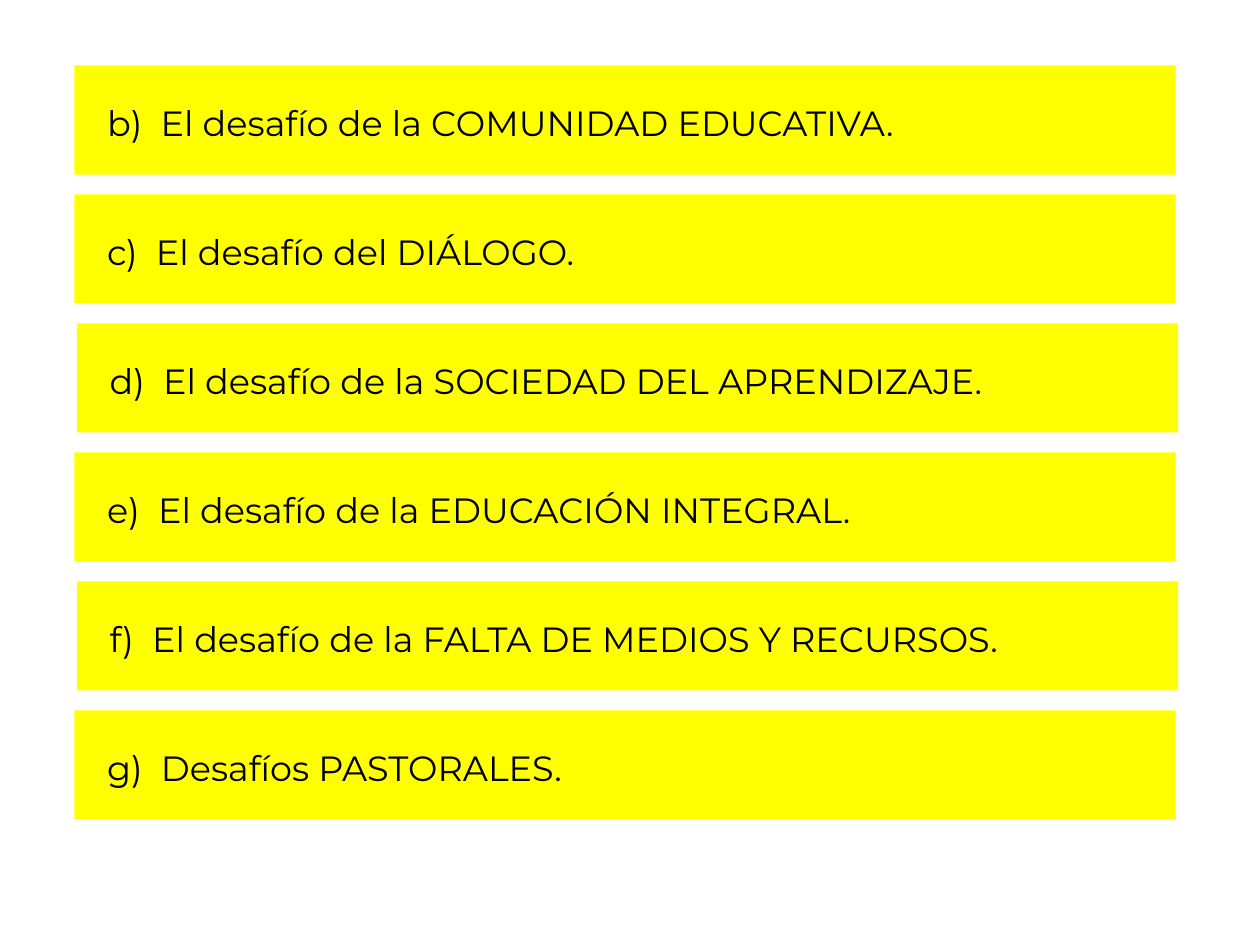
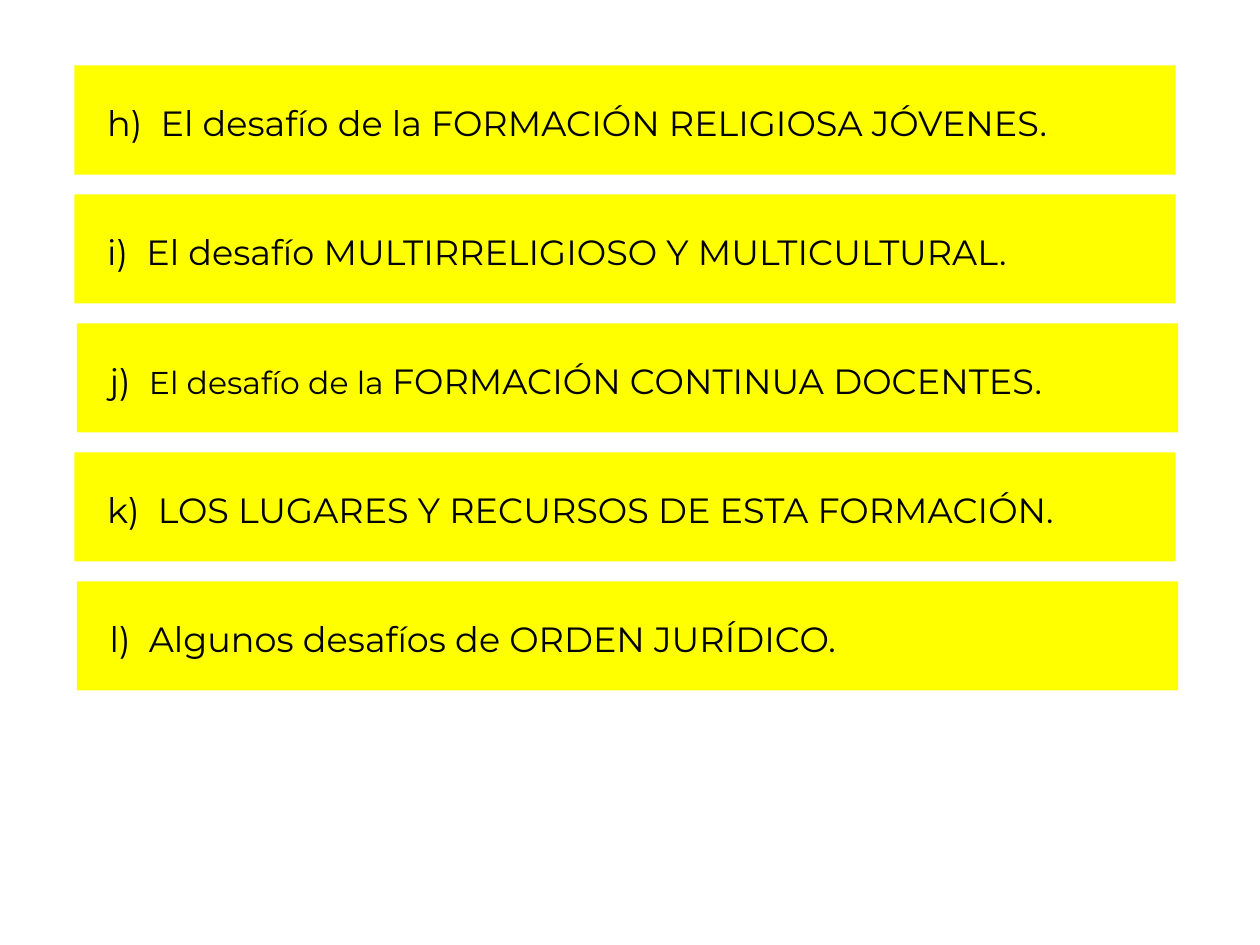
"""Build two slides listing the educational challenges as lettered bands."""
import dataclasses
import typing

import pptx
import pptx.dml.color
import pptx.enum.shapes
import pptx.enum.text
import pptx.util

Cm = pptx.util.Cm
RGBColor = pptx.dml.color.RGBColor


@dataclasses.dataclass(frozen=True)
class Theme:
    font: str = "Montserrat"
    ink: RGBColor = RGBColor(0x00, 0x00, 0x00)
    band_fill: RGBColor = RGBColor(0xFF, 0xFF, 0x00)
    body_size: float = 20
    lead_size: float = 18
    letter_gap: float = 5.2


@dataclasses.dataclass(frozen=True)
class Challenge:
    letter: str
    lead: str
    topic: str
    lead_size: float = Theme.body_size


THEME = Theme()

BAND_LEFT, BAND_TOP = Cm(1.5), Cm(1.32)
BAND_WIDTH, BAND_HEIGHT = Cm(22.2), Cm(2.2)
BAND_PITCH = Cm(2.6)
SHIFTED_ROWS, ROW_SHIFT = (2, 4), Cm(0.05)
TEXT_INSET_X, TEXT_INSET_Y = Cm(0.41), Cm(0.6)
TEXT_WIDTH, TEXT_HEIGHT = Cm(21.59), Cm(1.12)

SLIDES = (
    (
        Challenge("b", "El desafío de la ", "COMUNIDAD EDUCATIVA."),
        Challenge("c", "El desafío del ", "DIÁLOGO."),
        Challenge("d", "El desafío de la ", "SOCIEDAD DEL APRENDIZAJE."),
        Challenge("e", "El desafío de la ", "EDUCACIÓN INTEGRAL."),
        Challenge("f", "El desafío de la ", "FALTA DE MEDIOS Y RECURSOS."),
        Challenge("g", "Desafíos ", "PASTORALES."),
    ),
    (
        Challenge("h", "El desafío de la ", "FORMACIÓN RELIGIOSA JÓVENES."),
        Challenge("i", "El desafío ", "MULTIRRELIGIOSO Y MULTICULTURAL."),
        Challenge("j", "El desafío de la ", "FORMACIÓN CONTINUA DOCENTES.",
                  THEME.lead_size),
        Challenge("k", "", "LOS LUGARES Y RECURSOS DE ESTA FORMACIÓN."),
        Challenge("l", "Algunos desafíos de ", "ORDEN JURÍDICO."),
    ),
)


def add_span(para: typing.Any, text: str, *, size: float = THEME.body_size,
             color: RGBColor = THEME.ink, spacing: float = 0) -> None:
    span = para.add_run()
    span.text = text
    span.font.name = THEME.font
    span.font.size = pptx.util.Pt(size)
    span.font.color.rgb = color
    if spacing:
        span._r.get_or_add_rPr().set("spc", str(round(spacing * 100)))


def add_band(page: typing.Any, challenge: Challenge, row: int) -> None:
    left = BAND_LEFT + (ROW_SHIFT if row in SHIFTED_ROWS else 0)
    top = BAND_TOP + row * BAND_PITCH
    band = page.shapes.add_shape(pptx.enum.shapes.MSO_SHAPE.RECTANGLE,
                                 left, top, BAND_WIDTH, BAND_HEIGHT)
    band.shadow.inherit = False
    band.fill.solid()
    band.fill.fore_color.rgb = THEME.band_fill
    band.line.fill.background()

    box = page.shapes.add_textbox(left + TEXT_INSET_X, top + TEXT_INSET_Y,
                                  TEXT_WIDTH, TEXT_HEIGHT)
    box.text_frame.word_wrap = True
    box.text_frame.auto_size = pptx.enum.text.MSO_AUTO_SIZE.SHAPE_TO_FIT_TEXT
    para = box.text_frame.paragraphs[0]
    add_span(para, f"{challenge.letter})")
    add_span(para, " ", spacing=THEME.letter_gap)
    if challenge.lead:
        add_span(para, challenge.lead, size=challenge.lead_size)
    add_span(para, challenge.topic)


def main() -> None:
    deck = pptx.Presentation()
    deck.slide_width, deck.slide_height = Cm(25.4), Cm(19.05)
    blank_layout = deck.slide_layouts.get_by_name("Blank")
    for challenges in SLIDES:
        page = deck.slides.add_slide(blank_layout)
        for row, challenge in enumerate(challenges):
            add_band(page, challenge, row)
    deck.save("out.pptx")


if __name__ == "__main__":
    main()
